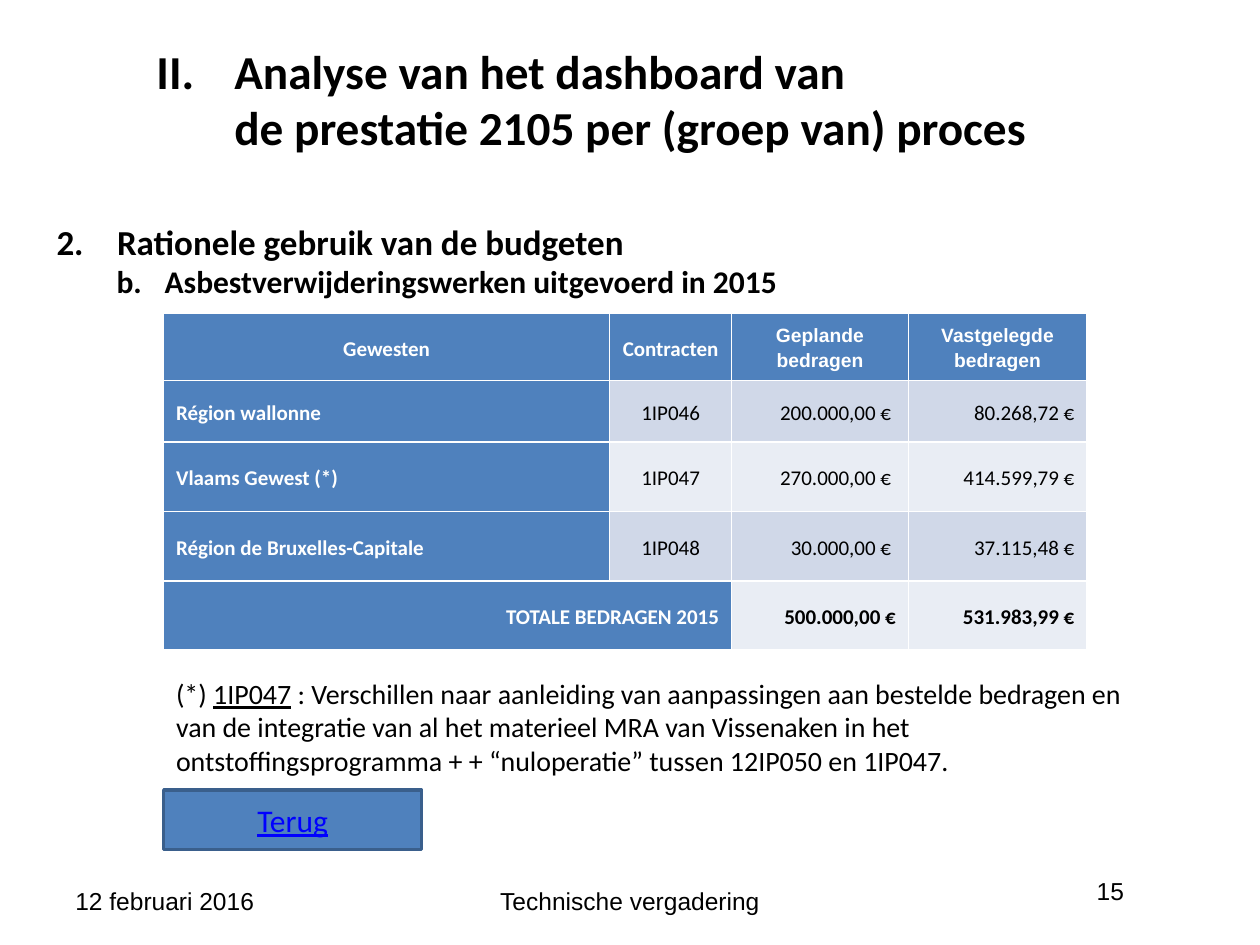
from copy import deepcopy
from dataclasses import dataclass

from lxml.etree import SubElement
from pptx import Presentation
from pptx.dml.color import RGBColor as Rgb
from pptx.enum.shapes import MSO_SHAPE as Shape
from pptx.enum.text import MSO_ANCHOR as Anchor, MSO_AUTO_SIZE as Auto, PP_ALIGN as Align
from pptx.oxml.ns import qn
from pptx.util import Cm, Pt


@dataclass(frozen=True)
class Theme:
    head: str = "Calibri"
    plain: str = "Arial"
    ink: Rgb = Rgb(0, 0, 0)
    white: Rgb = Rgb(255, 255, 255)
    blue: Rgb = Rgb.from_string("4F81BD")
    edge: Rgb = Rgb.from_string("3A5F8C")
    link: Rgb = Rgb.from_string("0000FF")
    bands: tuple = (Rgb.from_string("D0D8E8"), Rgb.from_string("E9EDF4"))
    title: int = 27
    topic: int = 20
    sub: int = 18
    note: int = 16
    foot: int = 14
    cell: int = 12
    small: int = 11


T = Theme()
LEFT, MID, RIGHT = Align.LEFT, Align.CENTER, Align.RIGHT

HEADS = ("Gewesten", "Contracten", "Geplande\nbedragen", "Vastgelegde\nbedragen")
ROWS = (
    ("Région wallonne", "1IP046", "200.000,00 € ", "80.268,72 €"),
    ("Vlaams Gewest (*)", "1IP047", "270.000,00 € ", "414.599,79 €"),
    ("Région de Bruxelles-Capitale", "1IP048", "30.000,00 € ", "37.115,48 €"),
    ("TOTALE BEDRAGEN 2015", "", "500.000,00 €", "531.983,99 €"),
)
WIDTHS = (8.99, 2.46, 3.56, 3.6)
HEIGHTS = (1.35, 1.24, 1.4, 1.4, 1.4)


def write(para, text, size, align=LEFT, color=T.ink, name=T.head, **more):
    """Add text to a paragraph, with each newline as a line break."""
    para.alignment = align
    style = {"size": Pt(size), "name": name, **more}
    for i, line in enumerate(text.split("\n")):
        if i:
            para.add_line_break()
        run = para.add_run()
        run.text = line
        for key, value in style.items():
            setattr(run.font, key, value)
        run.font.color.rgb = color
    for gap in para._p.findall(qn("a:br")):
        if len(gap) == 0:
            gap.append(deepcopy(run._r.rPr))


def number(para, kind, left, hang):
    """Number a paragraph, starting at two, with a hanging indent."""
    props = para._p.get_or_add_pPr()
    props.set("marL", str(Cm(left)))
    props.set("indent", str(-Cm(hang)))
    SubElement(props, qn("a:buAutoNum"), type=kind, startAt="2")


def area(box):
    return [Cm(v) for v in box]


def frame(slide, box):
    text = slide.shapes.add_textbox(*area(box)).text_frame
    text.word_wrap = True
    return text


def add_title(slide, box):
    title = slide.shapes.title
    title.left, title.top, title.width, title.height = area(box)
    text = title.text_frame
    text.auto_size = Auto.NONE
    text.vertical_anchor = Anchor.MIDDLE
    para = text.paragraphs[0]
    number(para, "romanUcPeriod", 1.57, 1.57)
    write(para, "Analyse van het dashboard van \nde prestatie 2105 per (groep van) proces",
          T.title, bold=True)


def add_topic(slide, box):
    text = frame(slide, box)
    para = text.paragraphs[0]
    number(para, "arabicPeriod", 1.22, 1.22)
    write(para, "Rationele gebruik van de budgeten", T.topic, bold=True)
    para = text.add_paragraph()
    number(para, "alphaLcPeriod", 2.18, 0.97)
    write(para, "Asbestverwijderingswerken uitgevoerd in 2015", T.sub, bold=True)


def fill_cell(cell, text, fill, align, pad=0.25, **style):
    cell.fill.solid()
    cell.fill.fore_color.rgb = fill
    cell.vertical_anchor = Anchor.MIDDLE
    cell.margin_left = cell.margin_right = Cm(pad)
    cell.margin_top = cell.margin_bottom = 0
    para = cell.text_frame.paragraphs[0]
    para.line_spacing = 1.15
    write(para, text, align=align, **style)


def add_budget(slide, box):
    table = slide.shapes.add_table(len(ROWS) + 1, len(HEADS), *area(box)).table
    table.first_col = True
    for col, wide in zip(table.columns, WIDTHS):
        col.width = Cm(wide)
    for row, high in zip(table.rows, HEIGHTS):
        row.height = Cm(high)
    for c, text in enumerate(HEADS):
        look = (dict(size=T.cell, name=T.head) if c < 2
                else dict(size=T.small, name=T.plain, pad=0.19))
        fill_cell(table.cell(0, c), text, T.blue, MID, color=T.white, bold=True, **look)
    last = len(ROWS)
    table.cell(last, 0).merge(table.cell(last, 1))
    for r, row in enumerate(ROWS, 1):
        total = r == last
        aligns = (RIGHT if total else LEFT, MID, RIGHT, RIGHT)
        for c, text in enumerate(row):
            cell = table.cell(r, c)
            if cell.is_spanned:
                continue
            fill = T.bands[(r - 1) % 2] if c else T.blue
            fill_cell(cell, text, fill, aligns[c], size=T.cell,
                      color=T.ink if c else T.white, bold=total or c == 0)


def add_note(slide, box):
    para = frame(slide, box).paragraphs[0]
    write(para, "(*) ", T.note)
    write(para, "1IP047", T.note, underline=True)
    write(para, "\u00a0: Verschillen naar aanleiding van aanpassingen aan bestelde bedragen en "
          "van de integratie van al het materieel MRA van Vissenaken in het "
          "ontstoffingsprogramma + + “nuloperatie” tussen 12IP050 en 1IP047.", T.note)


def add_button(slide, box):
    shape = slide.shapes.add_shape(Shape.RECTANGLE, *area(box))
    shape.shadow.inherit = False
    shape.fill.solid()
    shape.fill.fore_color.rgb = T.blue
    shape.line.color.rgb = T.edge
    shape.line.width = Pt(2)
    shape.text_frame.vertical_anchor = Anchor.MIDDLE
    write(shape.text_frame.paragraphs[0], "Terug", T.sub, MID, T.link, underline=True)


def add_footer(slide, box):
    left, top, wide, high = box
    parts = (
        ("12 februari 2016", LEFT, 0, 0.2, 5.92),
        ("Technische vergadering", MID, 6.63, 0.2, 9.6),
        ("15", RIGHT, wide - 4.7, 0, 4.7),
    )
    for text, align, x, y, w in parts:
        para = frame(slide, (left + x, top + y, w, high - y)).paragraphs[0]
        write(para, text, T.foot, align, name=T.plain)


def main():
    deck = Presentation()
    deck.slide_width, deck.slide_height = Cm(25.4), Cm(19.05)
    slide = deck.slides.add_slide(deck.slide_layouts[5])
    add_title(slide, (2.9, 0.91, 20, 2.16))
    add_topic(slide, (0.89, 4.32, 24, 1.88))
    add_budget(slide, (3.3, 6.32, sum(WIDTHS), sum(HEIGHTS)))
    add_note(slide, (3.3, 13.51, 19.6, 2.39))
    add_button(slide, (3.3, 15.93, 5.2, 1.2))
    add_footer(slide, (1.27, 17.53, 21.64, 1.14))
    deck.save("out.pptx")


if __name__ == "__main__":
    main()
